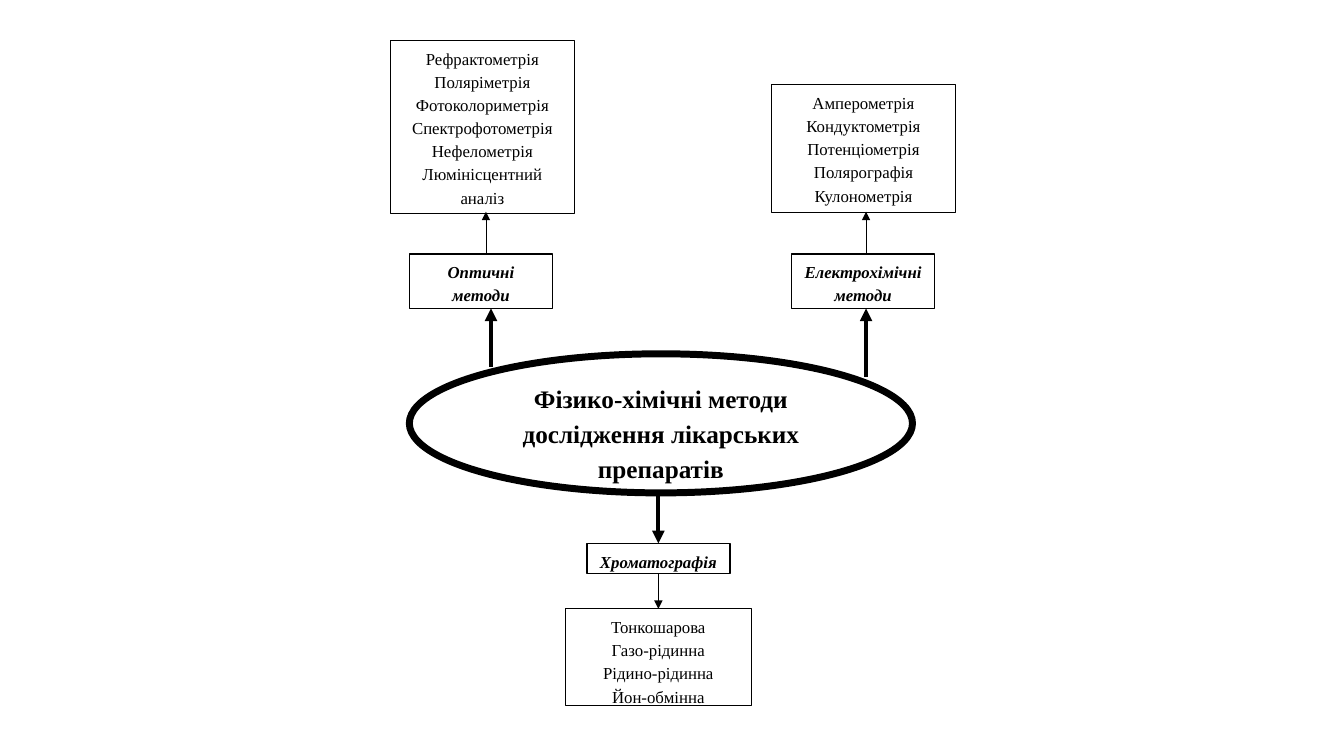
from dataclasses import dataclass

import lxml.etree
import pptx
import pptx.dml.color
import pptx.enum.shapes
import pptx.enum.text
import pptx.oxml.ns
import pptx.util

Inches = pptx.util.Inches
Pt = pptx.util.Pt
Shapes = pptx.enum.shapes.MSO_SHAPE


@dataclass(frozen=True)
class Theme:
    """Colours, font, type sizes and line widths of the diagram."""

    ink = pptx.dml.color.RGBColor(0, 0, 0)
    paper = pptx.dml.color.RGBColor(255, 255, 255)
    font = "Times New Roman"
    core_size = Pt(18)
    text_size = Pt(12)
    line_spacing = 1.15
    core_line = Pt(5)
    label_line = Pt(1)
    list_line = Pt(0.75)
    thick_arrow = Pt(3)
    thin_arrow = Pt(0.25)


THEME = Theme()


@dataclass(frozen=True)
class Box:
    """A rectangle on the slide, in inches."""

    left: float
    top: float
    width: float
    height: float

    @property
    def bottom(self):
        """Return the lower edge."""
        return self.top + self.height


def add_node(slide, kind, box, lines, size, line_width, bold=False, italic=False):
    """Draw an outlined shape with one centred paragraph per line."""
    shape = slide.shapes.add_shape(
        kind, Inches(box.left), Inches(box.top), Inches(box.width), Inches(box.height)
    )
    shape.shadow.inherit = False
    shape.fill.solid()
    shape.fill.fore_color.rgb = THEME.paper
    shape.line.color.rgb = THEME.ink
    shape.line.width = line_width
    frame = shape.text_frame
    frame.word_wrap = True
    frame.vertical_anchor = pptx.enum.text.MSO_ANCHOR.TOP
    for index, line in enumerate(lines):
        paragraph = frame.add_paragraph() if index else frame.paragraphs[0]
        paragraph.alignment = pptx.enum.text.PP_ALIGN.CENTER
        paragraph.line_spacing = THEME.line_spacing
        run = paragraph.add_run()
        run.text = line
        run.font.name = THEME.font
        run.font.size = size
        run.font.bold = bold
        run.font.italic = italic
        run.font.color.rgb = THEME.ink
    return shape


def add_arrow(slide, x, start, end, width):
    """Draw a vertical arrow from start to end."""
    connector = slide.shapes.add_connector(
        pptx.enum.shapes.MSO_CONNECTOR.STRAIGHT,
        Inches(x), Inches(start), Inches(x), Inches(end),
    )
    connector.line.color.rgb = THEME.ink
    connector.line.width = width
    qn = pptx.oxml.ns.qn
    properties = connector._element.spPr
    lxml.etree.SubElement(properties.find(qn("a:ln")), qn("a:tailEnd"), type="triangle")
    lxml.etree.SubElement(properties, qn("a:effectLst"))
    return connector


def add_branch_nodes(slide, label, label_box, methods, list_box):
    """Draw the name of a group and the list of its methods."""
    label_shape = add_node(slide, Shapes.RECTANGLE, label_box, [label],
                           THEME.text_size, THEME.label_line, bold=True, italic=True)
    list_shape = add_node(slide, Shapes.RECTANGLE, list_box, methods,
                          THEME.text_size, THEME.list_line)
    return label_shape, list_shape


def add_upper_branch(slide, label, label_box, methods, list_box, arrow_start, arrow_x):
    """Draw a group above the core, with arrow_x giving thick and thin arrows."""
    add_branch_nodes(slide, label, label_box, methods, list_box)
    thick_x, thin_x = arrow_x
    add_arrow(slide, thick_x, arrow_start, label_box.bottom, THEME.thick_arrow)
    add_arrow(slide, thin_x, label_box.top, 2.1, THEME.thin_arrow)


def add_lower_branch(slide, label, label_box, methods, list_box, arrow_start):
    """Draw a group below the core, its arrows joined to the boxes."""
    label_shape, list_shape = add_branch_nodes(slide, label, label_box, methods, list_box)
    x = label_box.left + label_box.width / 2
    thick = add_arrow(slide, x, arrow_start, label_box.top, THEME.thick_arrow)
    thick.end_connect(label_shape, 0)
    thin = add_arrow(slide, x, label_box.bottom, list_box.top, THEME.thin_arrow)
    thin.begin_connect(label_shape, 2)
    thin.end_connect(list_shape, 0)


def add_methods_slide(presentation):
    """Build the map of physico-chemical methods."""
    slide = presentation.slides.add_slide(presentation.slide_layouts[6])
    core = Box(4.06, 3.51, 4.99, 1.38)
    add_node(slide, Shapes.OVAL, core,
             ["Фізико-хімічні методи дослідження лікарських препаратів"],
             THEME.core_size, THEME.core_line, bold=True)
    add_upper_branch(
        slide, "Оптичні методи", Box(4.06, 2.52, 1.42, 0.54),
        ["Рефрактометрія", "Поляріметрія", "Фотоколориметрія",
         "Спектрофотометрія", "Нефелометрія", "Люмінісцентний аналіз"],
        Box(3.87, 0.4, 1.83, 1.72), 3.64, (4.87, 4.82),
    )
    add_upper_branch(
        slide, "Електрохімічні методи", Box(7.85, 2.52, 1.42, 0.54),
        ["Амперометрія", "Кондуктометрія", "Потенціометрія",
         "Полярографія", "Кулонометрія"],
        Box(7.65, 0.84, 1.83, 1.27), 3.74, (8.59, 8.59),
    )
    add_lower_branch(
        slide, "Хроматографія", Box(5.82, 5.39, 1.42, 0.3),
        ["Тонкошарова", "Газо-рідинна", "Рідино-рідинна", "Йон-обмінна"],
        Box(5.61, 6.04, 1.84, 0.96), core.bottom,
    )


def main():
    """Create and save the presentation."""
    presentation = pptx.Presentation()
    presentation.slide_width = Inches(13.33)
    presentation.slide_height = Inches(7.5)
    add_methods_slide(presentation)
    presentation.save("out.pptx")


if __name__ == "__main__":
    main()
